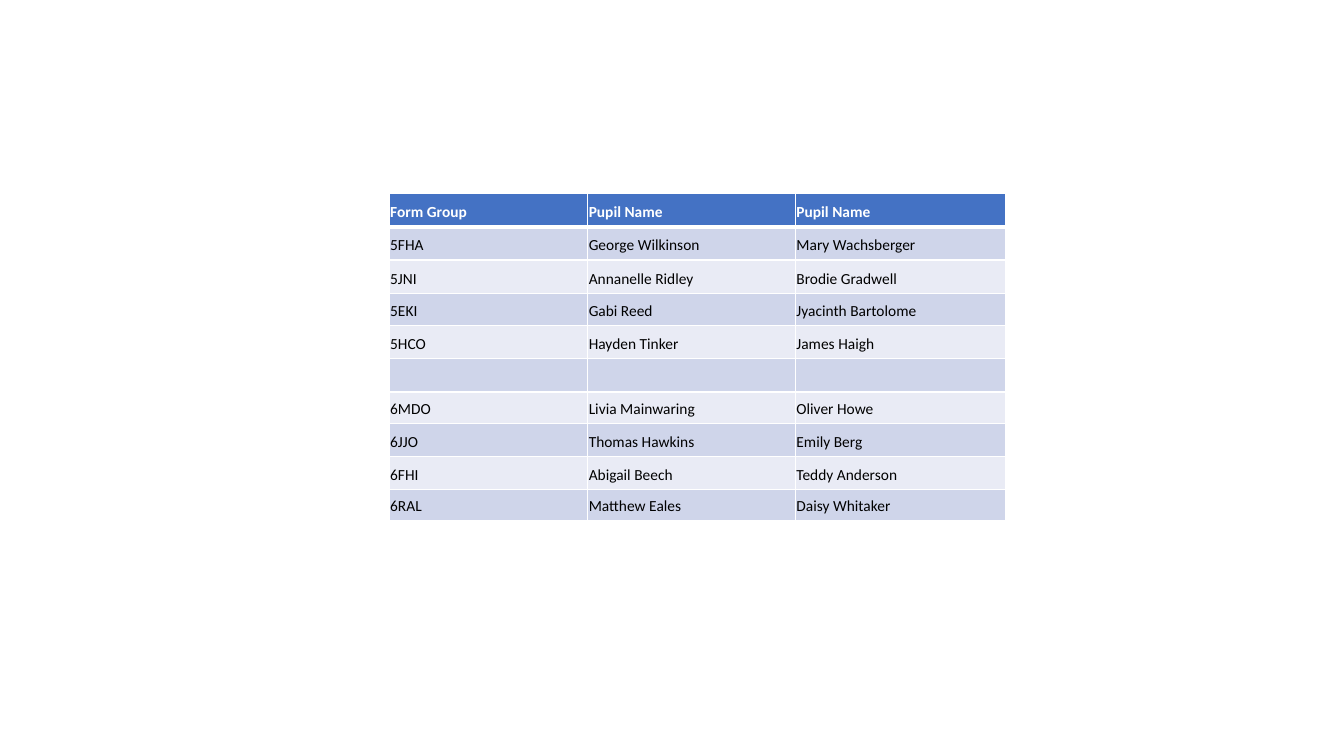
import pptx
import pptx.util
import pptx.dml.color
import pptx.enum.text
import pptx.oxml.ns
import lxml.etree
from pptx.util import Inches

WHITE = pptx.dml.color.RGBColor(0xFF, 0xFF, 0xFF)
BLACK = pptx.dml.color.RGBColor(0x00, 0x00, 0x00)
HEADER_BLUE = pptx.dml.color.RGBColor(0x44, 0x72, 0xC4)
DARK_BAND = pptx.dml.color.RGBColor(0xCF, 0xD5, 0xEA)
LIGHT_BAND = pptx.dml.color.RGBColor(0xE9, 0xEB, 0xF5)

PUPILS = [
    ("Form Group", "Pupil Name", "Pupil Name"),
    ("5FHA", "George Wilkinson", "Mary Wachsberger"),
    ("5JNI", "Annanelle Ridley", "Brodie Gradwell"),
    ("5EKI", "Gabi Reed", "Jyacinth Bartolome"),
    ("5HCO", "Hayden Tinker", "James Haigh"),
    ("", "", ""),
    ("6MDO", "Livia Mainwaring", "Oliver Howe"),
    ("6JJO", "Thomas Hawkins", "Emily Berg"),
    ("6FHI", "Abigail Beech", "Teddy Anderson"),
    ("6RAL", "Matthew Eales", "Daisy Whitaker"),
]
COLUMN_WIDTHS = [1.97, 2.06, 2.08]
ROW_HEIGHTS = [0.33, 0.33, 0.33, 0.32, 0.33, 0.33, 0.31, 0.33, 0.33, 0.31]
FONT_SIZE = pptx.util.Pt(11)


def add_border(cell, side, points):
    line = lxml.etree.SubElement(cell._tc.get_or_add_tcPr(), pptx.oxml.ns.qn("a:" + side),
                                 w=str(pptx.util.Pt(points)))
    fill = lxml.etree.SubElement(line, pptx.oxml.ns.qn("a:solidFill"))
    lxml.etree.SubElement(fill, pptx.oxml.ns.qn("a:srgbClr"), val=str(WHITE))


presentation = pptx.Presentation()
presentation.slide_width = Inches(13.33)
presentation.slide_height = Inches(7.5)
slide = presentation.slides.add_slide(presentation.slide_layouts[6])

# Table grid
pupil_table = slide.shapes.add_table(
    len(PUPILS), len(COLUMN_WIDTHS), Inches(3.86), Inches(1.92),
    Inches(sum(COLUMN_WIDTHS)), Inches(sum(ROW_HEIGHTS))).table
for column, width in zip(pupil_table.columns, COLUMN_WIDTHS):
    column.width = Inches(width)
for row, height in zip(pupil_table.rows, ROW_HEIGHTS):
    row.height = Inches(height)

# Cells: header row, then alternating bands
for row_index, entries in enumerate(PUPILS):
    is_header = row_index == 0
    band = HEADER_BLUE if is_header else DARK_BAND if row_index % 2 else LIGHT_BAND
    for column_index, entry in enumerate(entries):
        cell = pupil_table.cell(row_index, column_index)
        cell.margin_left = cell.margin_right = cell.margin_top = Inches(0.01)
        cell.margin_bottom = Inches(0.05)
        cell.vertical_anchor = pptx.enum.text.MSO_ANCHOR.BOTTOM
        for side in ("lnL", "lnR", "lnT", "lnB"):
            below_header = (row_index, side) in ((0, "lnB"), (1, "lnT"))
            add_border(cell, side, 3 if below_header else 1)
        cell.fill.solid()
        cell.fill.fore_color.rgb = band

        paragraph = cell.text_frame.paragraphs[0]
        if entry:
            paragraph.text = entry
        else:
            # Keeps the empty row as low as the others
            lxml.etree.SubElement(paragraph._p, pptx.oxml.ns.qn("a:endParaRPr"),
                                  sz=str(FONT_SIZE.centipoints))
        paragraph.font.name = "Calibri"
        paragraph.font.size = FONT_SIZE
        paragraph.font.bold = is_header
        paragraph.font.color.rgb = WHITE if is_header else BLACK

presentation.save("out.pptx")
